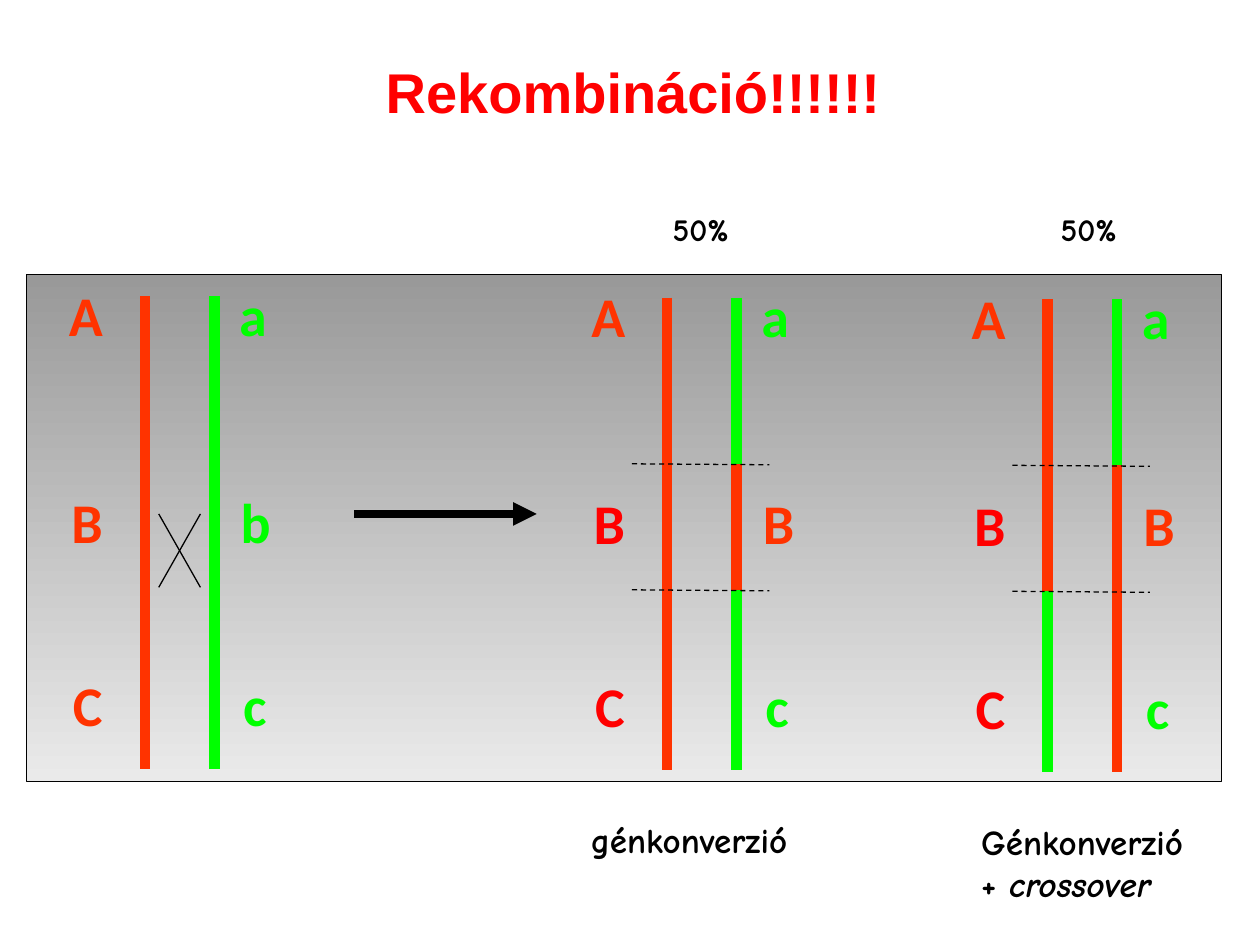
from pptx import Presentation
from pptx.dml.color import RGBColor
from pptx.enum.dml import MSO_LINE
from pptx.enum.shapes import MSO_CONNECTOR, MSO_SHAPE
from pptx.enum.text import MSO_ANCHOR, PP_ALIGN
from pptx.oxml.ns import qn
from pptx.util import Cm, Pt
from lxml.etree import SubElement

BLACK = RGBColor(0x00, 0x00, 0x00)
RED = RGBColor(0xFF, 0x00, 0x00)
ORANGE = RGBColor(0xFF, 0x33, 0x00)
GREEN = RGBColor(0x00, 0xFF, 0x00)
PANEL_TOP = RGBColor(0x99, 0x99, 0x99)
PANEL_BOTTOM = RGBColor(0xEA, 0xEA, 0xEA)

STRAND_GAP = 1.4
STRAND_LENGTH = 9.53
BREAKS = (3.35, 5.89)  # exchanged section, measured from the strand top
ALLELE_WIDTH = {"A": 1.32, "B": 1.32, "C": 1.35, "a": 1.09, "b": 1.14, "c": 1.02}
ALLELE_Y = (-0.44, 3.73, 7.42)
LEFT_ALLELE_X = (-1.78, -1.73, -1.7)
RIGHT_ALLELE_X = (1.65, 1.68, 1.73)


class SlideBuilder:
    title_font, allele_font, caption_font = "Arial", "Calibri", "Comic Neue"

    def __init__(self, slide):
        self.slide = slide

    def style(self, paragraph, font, size, color):
        paragraph.alignment = PP_ALIGN.LEFT
        paragraph.font.name = font
        paragraph.font.size = Pt(size)
        paragraph.font.bold = True
        paragraph.font.color.rgb = color

    def title(self, text, x, y, width, height):
        title = self.slide.shapes.title
        title.left, title.top, title.width, title.height = map(Cm, (x, y, width, height))
        title.text_frame.text = text
        title.text_frame.word_wrap = False
        title.text_frame.vertical_anchor = MSO_ANCHOR.TOP
        self.style(title.text_frame.paragraphs[0], self.title_font, 32, RED)

    def text(self, lines, x, y, width, height, font, size, color=BLACK):
        """Each line is a list of (text, italic) runs."""
        frame = self.slide.shapes.add_textbox(*map(Cm, (x, y, width, height))).text_frame
        frame.word_wrap = False
        for number, runs in enumerate(lines):
            paragraph = frame.add_paragraph() if number else frame.paragraphs[0]
            self.style(paragraph, font, size, color)
            for words, italic in runs:
                run = paragraph.add_run()
                run.text = words
                if italic:
                    run.font.italic = True

    def caption(self, lines, x, y, width, height, size=20):
        self.text(lines, x, y, width, height, self.caption_font, size)

    def panel(self, x, y, width, height):
        panel = self.slide.shapes.add_shape(MSO_SHAPE.RECTANGLE, *map(Cm, (x, y, width, height)))
        panel.shadow.inherit = False
        panel.fill.gradient()
        panel.fill.gradient_angle = 270
        for stop, color in zip(panel.fill.gradient_stops, (PANEL_TOP, PANEL_BOTTOM)):
            stop.color.rgb = color
        panel.line.color.rgb = BLACK
        panel.line.width = Pt(0.75)

    def line(self, x1, y1, x2, y2, color=BLACK, width=0.75, dashed=False, arrow=False):
        line = self.slide.shapes.add_connector(
            MSO_CONNECTOR.STRAIGHT, *map(Cm, (x1, y1, x2, y2)))
        line.line.color.rgb = color
        line.line.width = Pt(width)
        if dashed:
            line.line.dash_style = MSO_LINE.DASH
        if arrow:
            SubElement(line.line._get_or_add_ln(), qn("a:tailEnd"), type="triangle")
        SubElement(line._element.spPr, qn("a:effectLst"))

    def strand(self, x, top, color, start=0, end=STRAND_LENGTH):
        self.line(x, top + start, x, top + end, color, 6)

    def alleles(self, x, top, offsets, letters, colors):
        for letter, color, dx, dy in zip(letters, colors, offsets, ALLELE_Y):
            self.text([[(letter, False)]], x + dx, top + dy, ALLELE_WIDTH[letter], 1.6,
                      self.allele_font, 32, color)

    def chromatids(self, x, top, left_colors, right_letters, right_colors):
        self.strand(x, top, ORANGE)
        self.strand(x + STRAND_GAP, top, GREEN)
        self.alleles(x, top, LEFT_ALLELE_X, "ABC", left_colors)
        self.alleles(x, top, RIGHT_ALLELE_X, right_letters, right_colors)

    def break_lines(self, x, top):
        for offset in BREAKS:
            self.line(x - 0.71, top + offset, x + 2.06, top + offset + 0.02, dashed=True)


def main():
    prs = Presentation()
    prs.slide_width, prs.slide_height = Cm(25.4), Cm(19.05)
    builder = SlideBuilder(prs.slides.add_slide(prs.slide_layouts[5]))

    builder.title("Rekombináció!!!!!!", 7.52, 1.04, 10.57, 1.63)
    builder.panel(0.53, 5.54, 24.1, 10.21)

    # Parental chromatids with the crossing site
    builder.chromatids(2.92, 5.97, [ORANGE] * 3, "abc", [GREEN] * 3)
    builder.line(3.2, 10.36, 4.04, 11.84)
    builder.line(3.2, 11.84, 4.04, 10.36)
    builder.line(7.14, 10.36, 10.82, 10.36, width=4.5, arrow=True)

    # The two outcomes
    conversion_x, conversion_top = 13.45, 6.0
    crossover_x, crossover_top = 21.12, 6.03
    for x, top in ((conversion_x, conversion_top), (crossover_x, crossover_top)):
        builder.chromatids(x, top, (ORANGE, RED, RED), "aBc", (GREEN, ORANGE, GREEN))

    # Exchanged sections
    builder.strand(conversion_x + STRAND_GAP, conversion_top, ORANGE, *BREAKS)
    builder.strand(crossover_x + STRAND_GAP, crossover_top, ORANGE, start=BREAKS[0])
    builder.strand(crossover_x, crossover_top, GREEN, start=BREAKS[1])
    builder.break_lines(conversion_x, conversion_top)
    builder.break_lines(crossover_x, crossover_top)

    # Frequencies and outcome names
    for x in (13.31, 21.13):
        builder.caption([[("50%", False)]], x, 4.1, 1.83, 1.02, size=18)
    builder.caption([[("génkonverzió", False)]], 11.66, 16.38, 4.83, 1.12)
    builder.caption([[("Génkonverzió", False)], [("+ ", False), ("crossover", True)]],
                    19.53, 16.41, 4.95, 1.96)

    prs.save("out.pptx")


if __name__ == "__main__":
    main()
